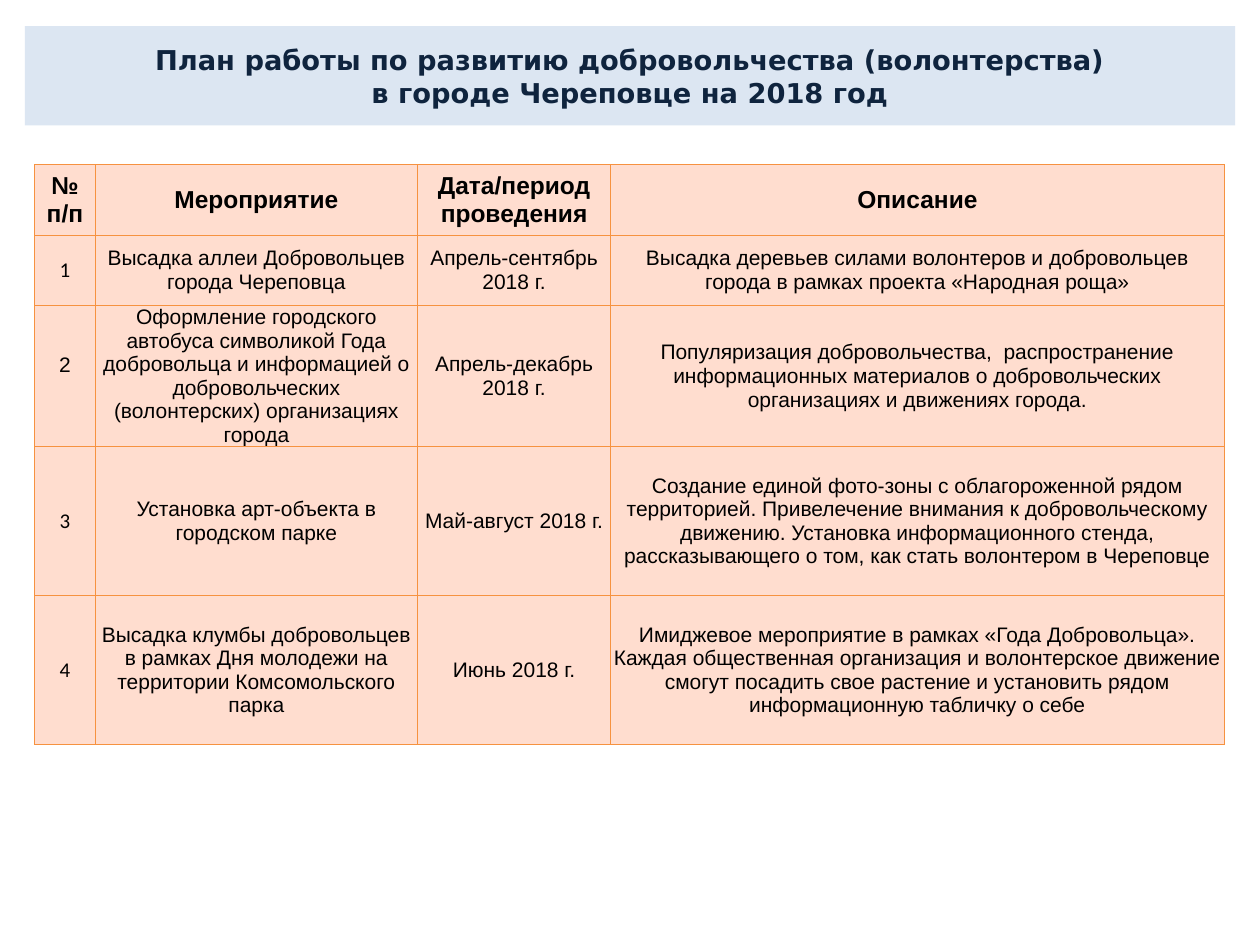
from lxml import etree
from pptx import Presentation
from pptx.dml.color import RGBColor
from pptx.enum import shapes, text
from pptx.oxml.ns import qn
from pptx.util import Cm, Pt

TITLE = ["План работы по развитию добровольчества (волонтерства)",
         "в городе Череповце на 2018 год"]
HEADERS = ["№ п/п", "Мероприятие", "Дата/период проведения", "Описание"]
EVENTS = [
    ["Высадка аллеи Добровольцев города Череповца",
     "Апрель-сентябрь 2018 г.",
     "Высадка деревьев силами волонтеров и добровольцев города в рамках "
     "проекта «Народная роща»"],
    ["Оформление городского автобуса символикой Года добровольца и "
     "информацией о добровольческих (волонтерских) организациях города",
     "Апрель-декабрь\n2018 г.",
     "Популяризация добровольчества,  распространение информационных "
     "материалов о добровольческих организациях и движениях города."],
    ["Установка арт-объекта в городском парке",
     "Май-август 2018 г.",
     "Создание единой фото-зоны с облагороженной рядом территорией. "
     "Привелечение внимания к добровольческому движению. Установка "
     "информационного стенда, рассказывающего о том, как стать волонтером "
     "в Череповце"],
    ["Высадка клумбы добровольцев в рамках Дня молодежи на территории "
     "Комсомольского парка",
     "Июнь 2018 г.",
     "Имиджевое мероприятие в рамках «Года Добровольца». Каждая общественная "
     "организация и волонтерское движение смогут посадить свое растение и "
     "установить рядом информационную табличку о себе"],
]
COLUMN_WIDTHS = [1.22, 6.5, 3.89, 12.37]
ROW_HEIGHTS = [1.42, 1.42, 2.16, 3, 3]
NUMBER_FONTS = ["Calibri", "Arial", "Calibri", "Calibri"]


def color(value):
    return RGBColor.from_string(value)


def write(frame, lines, size, font, ink, bold=False):
    """Fill a text frame with centred paragraphs, one run each."""
    frame.word_wrap = True
    for index, line in enumerate(lines):
        paragraph = frame.add_paragraph() if index else frame.paragraphs[0]
        paragraph.alignment = text.PP_ALIGN.CENTER
        run = paragraph.add_run()
        run.text = line
        run.font.size = Pt(size)
        run.font.name = font
        run.font.bold = bold
        run.font.color.rgb = color(ink)


def add_title(slide):
    banner = slide.shapes.add_shape(shapes.MSO_SHAPE.RECTANGLE,
                                    Cm(0.5), Cm(0.53), Cm(24.4), Cm(2))
    banner.shadow.inherit = False
    banner.fill.solid()
    banner.fill.fore_color.rgb = color("DCE6F2")
    banner.line.fill.background()
    banner.text_frame.vertical_anchor = text.MSO_ANCHOR.MIDDLE
    write(banner.text_frame, TITLE, 15.6, "DejaVu Sans", "0F243E", bold=True)


def add_borders(cell, line_color, width):
    properties = cell._tc.get_or_add_tcPr()
    for position, side in enumerate(("a:lnL", "a:lnR", "a:lnT", "a:lnB")):
        border = etree.Element(qn(side), w=str(Pt(width)))
        fill = etree.SubElement(border, qn("a:solidFill"))
        etree.SubElement(fill, qn("a:srgbClr"), val=line_color)
        properties.insert(position, border)  # borders precede the fill


def fill_cell(cell, content, size=12, font="Arial", bold=False):
    cell.margin_left = cell.margin_right = Cm(0.03)
    cell.margin_top = cell.margin_bottom = 0
    cell.vertical_anchor = text.MSO_ANCHOR.MIDDLE
    cell.fill.solid()
    cell.fill.fore_color.rgb = color("FFDDCF")
    add_borders(cell, "F69240", 0.75)
    write(cell.text_frame, content.split("\n"), size, font, "000000", bold)


def add_plan(slide):
    plan = slide.shapes.add_table(
        len(ROW_HEIGHTS), len(COLUMN_WIDTHS), Cm(0.7), Cm(3.32),
        Cm(sum(COLUMN_WIDTHS)), Cm(sum(ROW_HEIGHTS))).table
    for column, width in zip(plan.columns, COLUMN_WIDTHS):
        column.width = Cm(width)
    for row, height in zip(plan.rows, ROW_HEIGHTS):
        row.height = Cm(height)

    # Header row
    for column, header in enumerate(HEADERS):
        fill_cell(plan.cell(0, column), header, size=14, bold=True)

    # Numbered events
    for number, (event, font) in enumerate(zip(EVENTS, NUMBER_FONTS), 1):
        fill_cell(plan.cell(number, 0), str(number), font=font)
        for column, content in enumerate(event, 1):
            fill_cell(plan.cell(number, column), content)

    # The second number sits a little above the middle
    plan.cell(2, 0).margin_bottom = Cm(0.45)


def main():
    deck = Presentation()
    deck.slide_width, deck.slide_height = Cm(25.4), Cm(19.05)
    slide = deck.slides.add_slide(deck.slide_layouts[6])
    add_title(slide)
    add_plan(slide)
    deck.save("out.pptx")


if __name__ == "__main__":
    main()
